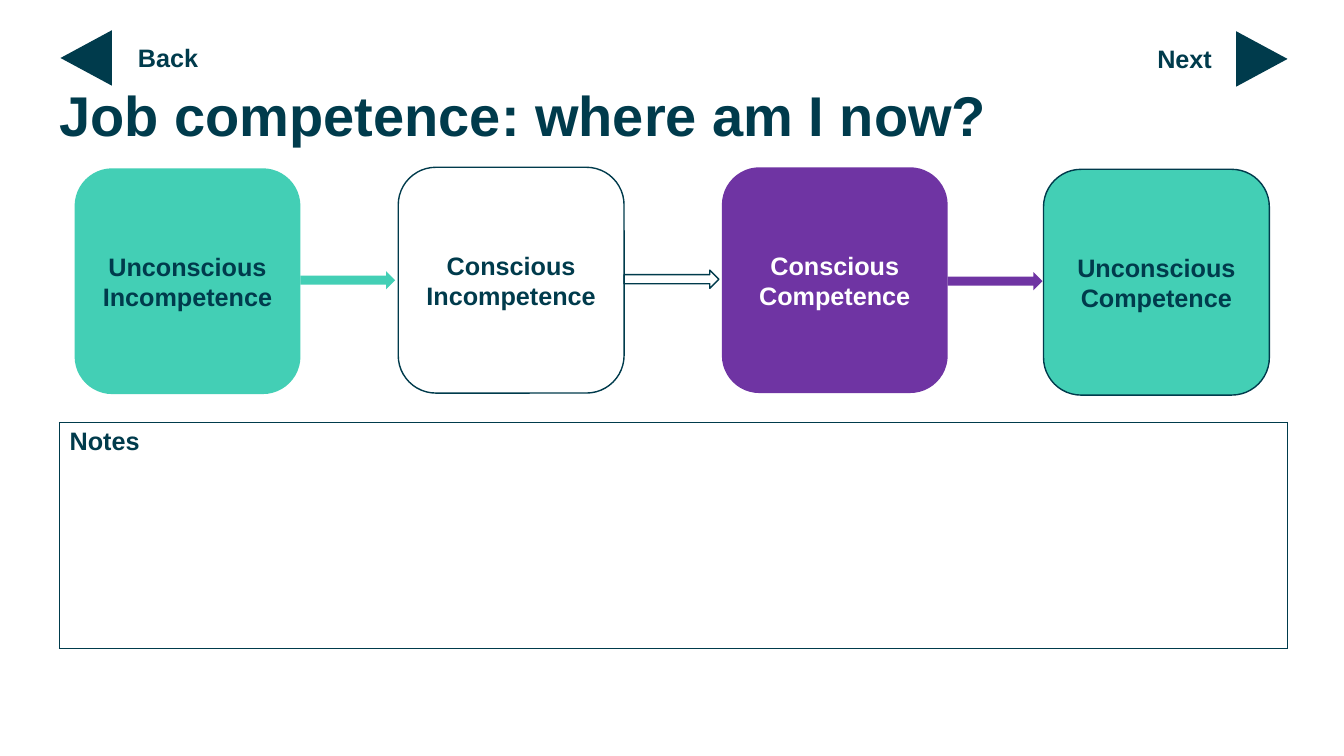
from lxml import etree
from pptx import Presentation
from pptx.dml.color import RGBColor
from pptx.enum.shapes import MSO_SHAPE as Shape
from pptx.enum.text import MSO_ANCHOR as Anchor, MSO_AUTO_SIZE as AutoSize, PP_ALIGN as Align
from pptx.oxml.ns import qn
from pptx.util import Inches, Pt

NAVY, TEAL, PURPLE, WHITE = "003B4C", "43CFB5", "6F34A3", "FFFFFF"
STAGE_SIZE = 2.24
ARROW_WIDTH, ARROW_HEIGHT = 0.94, 0.18

# label, left, top, fill, outline, text colour, top of the arrow that follows
STAGES = [
    ("Unconscious\nIncompetence", 0.74, 1.67, TEAL, None, NAVY, 2.69),
    ("Conscious Incompetence", 3.95, 1.66, WHITE, NAVY, NAVY, 2.68),
    ("Conscious Competence", 7.16, 1.66, PURPLE, None, WHITE, 2.7),
    ("Unconscious Competence", 10.35, 1.68, TEAL, NAVY, NAVY, None),
]


def color(hex_value):
    return RGBColor.from_string(hex_value)


def write_text(frame, text, size=18, text_color=NAVY, align=Align.LEFT,
               anchor=Anchor.TOP, line_spacing=None):
    """Fill a text frame with bold Arial, one paragraph per line of text."""
    frame.word_wrap = True
    frame.vertical_anchor = anchor
    for index, line in enumerate(text.split("\n")):
        paragraph = frame.add_paragraph() if index else frame.paragraphs[0]
        paragraph.alignment = align
        paragraph.line_spacing = line_spacing
        run = paragraph.add_run()
        run.text = line
        run.font.name = "Arial"
        run.font.size = Pt(size)
        run.font.bold = True
        run.font.color.rgb = color(text_color)


def add_shape(slide, kind, box, fill, outline=None):
    shape = slide.shapes.add_shape(kind, *map(Inches, box))
    shape.shadow.inherit = False
    shape.fill.solid()
    shape.fill.fore_color.rgb = color(fill)
    if outline:
        shape.line.color.rgb = color(outline)
        shape.line.width = Pt(1)
    else:
        shape.line.fill.background()
    return shape


def add_title(slide, box, text):
    title = slide.shapes.title
    title.left, title.top, title.width, title.height = map(Inches, box)
    frame = title.text_frame
    frame.auto_size = AutoSize.NONE
    frame.margin_left = frame.margin_right = frame.margin_top = frame.margin_bottom = 0
    write_text(frame, text, size=40, line_spacing=0.9)


def add_stage(slide, label, left, top, fill, outline, text_color, arrow_top):
    """Draw one competence stage and the arrow leading to the next one."""
    box = (left, top, STAGE_SIZE, STAGE_SIZE)
    stage = add_shape(slide, Shape.ROUNDED_RECTANGLE, box, fill, outline)
    write_text(stage.text_frame, label, text_color=text_color,
               align=Align.CENTER, anchor=Anchor.MIDDLE)
    if arrow_top is not None:
        arrow_box = (left + STAGE_SIZE, arrow_top, ARROW_WIDTH, ARROW_HEIGHT)
        add_shape(slide, Shape.RIGHT_ARROW, arrow_box, fill, outline)


def set_borders(cell, hex_value, width):
    properties = cell._tc.get_or_add_tcPr()
    for index, side in enumerate(("a:lnL", "a:lnR", "a:lnT", "a:lnB")):
        border = etree.Element(qn(side), w=str(Pt(width)))
        solid = etree.SubElement(border, qn("a:solidFill"))
        etree.SubElement(solid, qn("a:srgbClr"), val=hex_value)
        properties.insert(index, border)


def add_notes_table(slide, box):
    table = slide.shapes.add_table(1, 1, *map(Inches, box)).table
    table.first_row = table.horz_banding = False
    cell = table.cell(0, 0)
    cell.fill.solid()
    cell.fill.fore_color.rgb = color(WHITE)
    set_borders(cell, NAVY, 1)
    write_text(cell.text_frame, "Notes")


def add_navigation(slide, left, top, label, label_left, rotation):
    """Draw a turned triangle at left, top with its label beside it."""
    triangle = add_shape(slide, Shape.ISOSCELES_TRIANGLE, (left, top, 0.55, 0.51), NAVY)
    triangle.rotation = rotation
    label_box = (label_left, top + 0.05, 0.84, 0.4)
    text_box = slide.shapes.add_textbox(*map(Inches, label_box))
    write_text(text_box.text_frame, label)
    text_box.text_frame.auto_size = AutoSize.SHAPE_TO_FIT_TEXT


def main():
    presentation = Presentation()
    presentation.slide_width = Inches(13.33)
    presentation.slide_height = Inches(7.5)
    slide = presentation.slides.add_slide(presentation.slide_layouts[5])
    add_title(slide, (0.59, 0.87, 11.22, 0.79), "Job competence: where am I now?")
    for stage in STAGES:
        add_stage(slide, *stage)
    add_notes_table(slide, (0.59, 4.19, 12.18, 2.24))
    add_navigation(slide, 0.58, 0.32, "Back", 1.27, rotation=270)
    add_navigation(slide, 12.24, 0.33, "Next", 11.38, rotation=90)
    presentation.save("out.pptx")


if __name__ == "__main__":
    main()
